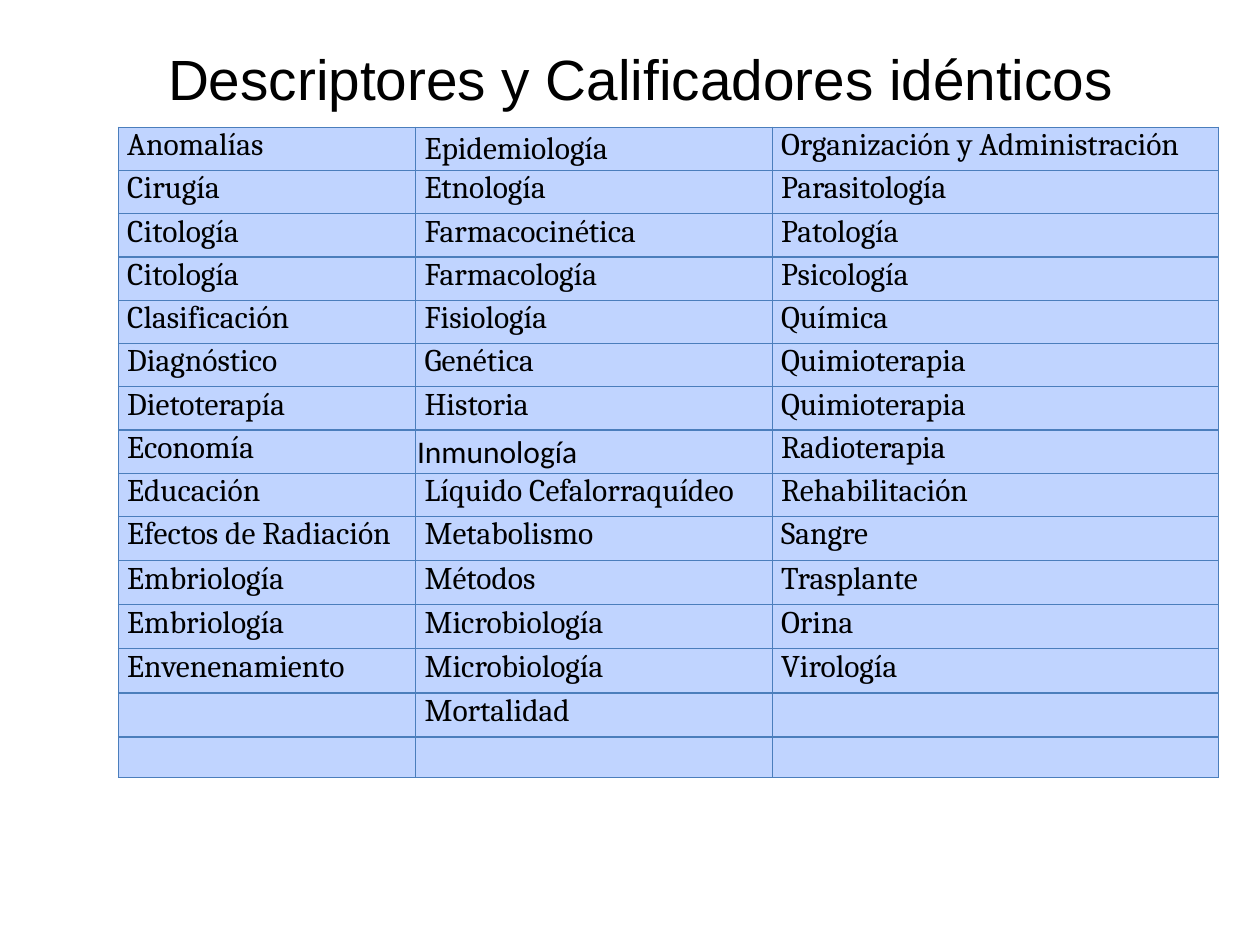
from lxml.etree import SubElement
from pptx import Presentation
from pptx.dml.color import RGBColor
from pptx.enum.text import MSO_ANCHOR, PP_ALIGN
from pptx.oxml.ns import qn
from pptx.util import Inches, Pt

BLACK = RGBColor(0, 0, 0)
CELL_BLUE = RGBColor(0xC0, 0xD4, 0xFF)
BORDER_BLUE = RGBColor(0x4B, 0x7E, 0xBC)

COL_WIDTHS = [2.36, 2.83, 3.54]
ROW_HEIGHTS = [3.09 / 9] * 9 + [0.35] * 5 + [0.32]
ROWS = [
    ("Anomalías", "Epidemiología", "Organización y Administración"),
    ("Cirugía", "Etnología", "Parasitología"),
    ("Citología", "Farmacocinética", "Patología"),
    ("Citología", "Farmacología", "Psicología"),
    ("Clasificación", "Fisiología", "Química"),
    ("Diagnóstico", "Genética", "Quimioterapia"),
    ("Dietoterapía", "Historia", "Quimioterapia"),
    ("Economía", "Inmunología", "Radioterapia"),
    ("Educación", "Líquido Cefalorraquídeo", "Rehabilitación"),
    ("Efectos de Radiación", "Metabolismo", "Sangre"),
    ("Embriología", "Métodos", "Trasplante"),
    ("Embriología", "Microbiología", "Orina"),
    ("Envenenamiento", "Microbiología", "Virología"),
    ("", "Mortalidad", ""),
    ("", "", ""),
]
MIDDLE_CELLS = {"Epidemiología": {}, "Inmunología": {"font": "Calibri", "inset": 0.01}}


def write(tf, text, size=18, font="Cambria", align=PP_ALIGN.LEFT):
    p = tf.paragraphs[0]
    p.alignment = align
    r = p.add_run()
    r.text = text
    r.font.size = Pt(size)
    r.font.name = font
    r.font.bold = False
    r.font.color.rgb = BLACK


def add_title(s, text):
    sp = s.shapes.title
    sp.left, sp.top = Inches(0.3), Inches(0.2)
    sp.width, sp.height = Inches(9.7), Inches(1.22)
    tf = sp.text_frame
    tf.word_wrap = True
    tf.vertical_anchor = MSO_ANCHOR.TOP
    tf.margin_top = Inches(0.15)
    tf.margin_left, tf.margin_right = Inches(0.1), Inches(0.23)
    write(tf, text, size=32.4, font="Arial", align=PP_ALIGN.CENTER)


def set_borders(cell, color, width):
    tc_pr = cell._tc.get_or_add_tcPr()
    for side in ("lnL", "lnR", "lnT", "lnB"):
        ln = SubElement(tc_pr, qn(f"a:{side}"), w=str(Pt(width)))
        fill = SubElement(ln, qn("a:solidFill"))
        SubElement(fill, qn("a:srgbClr"), val=str(color))


def fill_cell(cell, text, font="Cambria", inset=0.07, anchor=MSO_ANCHOR.TOP):
    set_borders(cell, BORDER_BLUE, 0.75)
    cell.fill.solid()
    cell.fill.fore_color.rgb = CELL_BLUE
    cell.margin_left = cell.margin_right = Inches(inset)
    cell.margin_top = Inches(0.01 if anchor == MSO_ANCHOR.MIDDLE else 0)
    cell.margin_bottom = 0
    cell.vertical_anchor = anchor
    if text:
        write(cell.text_frame, text, font=font)


def add_table(s, rows):
    frame = s.shapes.add_table(
        len(rows), len(COL_WIDTHS), Inches(0.94), Inches(1.01),
        Inches(sum(COL_WIDTHS)), Inches(sum(ROW_HEIGHTS)))
    table = frame.table
    table.first_row = table.horz_banding = False
    for col, width in zip(table.columns, COL_WIDTHS):
        col.width = Inches(width)
    for row, height, texts in zip(table.rows, ROW_HEIGHTS, rows):
        row.height = Inches(height)
        for cell, text in zip(row.cells, texts):
            if text in MIDDLE_CELLS:
                fill_cell(cell, text, anchor=MSO_ANCHOR.MIDDLE, **MIDDLE_CELLS[text])
            else:
                fill_cell(cell, text)


def main():
    prs = Presentation()
    prs.slide_width, prs.slide_height = Inches(10), Inches(7.5)
    s = prs.slides.add_slide(prs.slide_layouts[5])
    add_title(s, "Descriptores y Calificadores idénticos")
    add_table(s, ROWS)
    prs.save("out.pptx")


if __name__ == "__main__":
    main()
